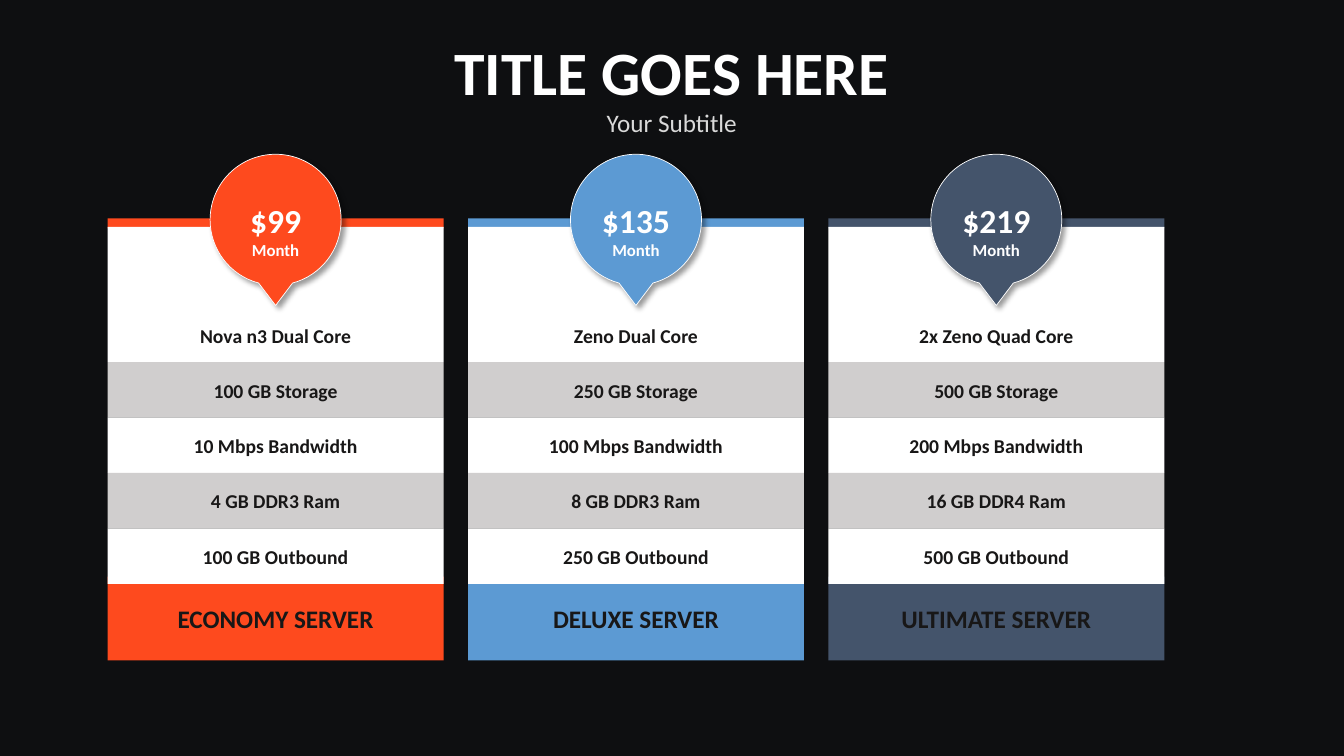
import math
import pptx
import pptx.util
import pptx.dml.color
import pptx.enum.shapes
import pptx.enum.text
import pptx.oxml.ns
from lxml import etree

Pt = pptx.util.Pt
RGBColor = pptx.dml.color.RGBColor
qn = pptx.oxml.ns.qn
PP_ALIGN = pptx.enum.text.PP_ALIGN
MSO_ANCHOR = pptx.enum.text.MSO_ANCHOR

BACKGROUND = RGBColor(0x0E, 0x0F, 0x11)
WHITE = RGBColor(0xFF, 0xFF, 0xFF)
SUBTITLE_GRAY = RGBColor(0xD9, 0xD9, 0xD9)
ROW_GRAY = RGBColor(0xD0, 0xCE, 0xCE)
INK = RGBColor(0x18, 0x17, 0x17)
ORANGE = RGBColor(0xFE, 0x4A, 0x1E)
BLUE = RGBColor(0x5C, 0x9A, 0xD3)
SLATE = RGBColor(0x44, 0x54, 0x6B)

TITLE = [("TITLE GOES HERE", 44, WHITE, True), ("Your Subtitle", 18, SUBTITLE_GRAY, False)]
PLANS = [
    {"name": "ECONOMY SERVER", "price": "$99", "color": ORANGE,
     "features": ["Nova n3 Dual Core", "100 GB Storage", "10 Mbps Bandwidth",
                  "4 GB DDR3 Ram", "100 GB Outbound"]},
    {"name": "DELUXE SERVER", "price": "$135", "color": BLUE,
     "features": ["Zeno Dual Core", "250 GB Storage", "100 Mbps Bandwidth",
                  "8 GB DDR3 Ram", "250 GB Outbound"]},
    {"name": "ULTIMATE SERVER", "price": "$219", "color": SLATE,
     "features": ["2x Zeno Quad Core", "500 GB Storage", "200 Mbps Bandwidth",
                  "16 GB DDR4 Ram", "500 GB Outbound"]},
]

SLIDE_W, SLIDE_H = 960, 540
LEFT, PITCH, WIDTH = 76.9, 257.4, 240
BAR_TOP, BAR_H = 156, 7.2
FIRST_TOP, ROWS_TOP, ROW_H = 162, 258.6, 39.6
FOOTER_TOP, FOOTER_H = 411.8, 60
LABEL_INSET, LABEL_W = 12, 216
LABEL_TOP, LABEL_STEP, LABEL_H = 231.1, 39.45, 17
NAME_TOP, NAME_H = 430.6, 21.6
PIN_Y, PIN_R, PIN_TIP = 157, 46.8, 218.2
PIN_ANGLES = [15, 90, 180, 270, 345]


def write(tf, lines):
    tf.word_wrap = True
    tf.text = "\n".join(line[0] for line in lines)
    for p, (_, size, color, bold) in zip(tf.paragraphs, lines):
        p.alignment = PP_ALIGN.CENTER
        font = p.runs[0].font
        font.name, font.size, font.bold = "Calibri", Pt(size), bold
        font.color.rgb = color


def add_rect(shapes, left, top, width, height, color):
    sp = shapes.add_shape(pptx.enum.shapes.MSO_SHAPE.RECTANGLE,
                          Pt(left), Pt(top), Pt(width), Pt(height))
    sp.shadow.inherit = False
    sp.fill.solid()
    sp.fill.fore_color.rgb = color
    sp.line.fill.background()
    return sp


def add_band(s, left, top, height, color, text, text_top, text_h, size):
    shapes = s.shapes.add_group_shape().shapes
    add_rect(shapes, left, top, WIDTH, height, color)
    tf = shapes.add_textbox(Pt(left + LABEL_INSET), Pt(text_top),
                            Pt(LABEL_W), Pt(text_h)).text_frame
    tf.margin_left = tf.margin_right = tf.margin_top = tf.margin_bottom = 0
    write(tf, [(text, size, INK, True)])


def add_shade(s):
    shade = add_rect(s.shapes, 0, 0, SLIDE_W, SLIDE_H, BACKGROUND)
    color = shade._element.spPr.find(qn("a:solidFill"))[0]
    etree.SubElement(color, qn("a:alpha"), val="80000")
    s.shapes._spTree.insert(2, shade._element)


def pin_points(center):
    def point(a, along=0):
        x = PIN_R * (math.sin(a) + along * math.cos(a))
        y = PIN_R * (math.cos(a) - along * math.sin(a))
        return Pt(center + x), Pt(PIN_Y + y)

    angles = [math.radians(a) for a in PIN_ANGLES]
    points = [point(angles[0])]
    for a, b in zip(angles, angles[1:]):
        reach = 4 / 3 * math.tan((b - a) / 4)
        points += [point(a, reach), point(b, -reach), point(b)]
    return points


def round_pin(sp):
    lines = list(sp._element.iter(qn("a:lnTo")))[1:]
    for i in range(0, len(lines), 3):
        curve = etree.Element(qn("a:cubicBezTo"))
        lines[i].addprevious(curve)
        for line in lines[i:i + 3]:
            curve.append(line[0])
            line.getparent().remove(line)


def add_price_pin(s, center, color, price):
    builder = s.shapes.build_freeform(Pt(center), Pt(PIN_TIP))
    builder.add_line_segments(pin_points(center), close=True)
    sp = builder.convert_to_shape()
    round_pin(sp)
    sp.fill.solid()
    sp.fill.fore_color.rgb = color
    sp.line.color.rgb = WHITE
    sp.line.width = Pt(0.5)
    sp.shadow.inherit = False
    effects = sp._element.spPr.find(qn("a:effectLst"))
    shadow = etree.SubElement(effects, qn("a:outerShdw"), blurRad=str(Pt(4)),
                              dist=str(Pt(3)), dir="2700000", algn="tl", rotWithShape="0")
    black = etree.SubElement(shadow, qn("a:srgbClr"), val="000000")
    etree.SubElement(black, qn("a:alpha"), val="40000")
    sp.text_frame.vertical_anchor = MSO_ANCHOR.MIDDLE
    write(sp.text_frame, [(price, 24, WHITE, True), ("Month", 12, WHITE, True)])


def add_plan(s, left, plan):
    color = plan["color"]
    add_rect(s.shapes, left, BAR_TOP, WIDTH, BAR_H, color)
    add_band(s, left, FOOTER_TOP, FOOTER_H, color, plan["name"], NAME_TOP, NAME_H, 18)
    for i, feature in enumerate(plan["features"]):
        top = ROWS_TOP + (i - 1) * ROW_H if i else FIRST_TOP
        bottom = ROWS_TOP + i * ROW_H
        add_band(s, left, top, bottom - top, ROW_GRAY if i % 2 else WHITE,
                 feature, LABEL_TOP + i * LABEL_STEP, LABEL_H, 14)
    add_price_pin(s, left + WIDTH / 2, color, plan["price"])


def main():
    prs = pptx.Presentation()
    prs.slide_width, prs.slide_height = Pt(SLIDE_W), Pt(SLIDE_H)
    s = prs.slides.add_slide(prs.slide_layouts[5])
    s.background.fill.solid()
    s.background.fill.fore_color.rgb = BACKGROUND
    add_shade(s)
    title = s.shapes.title
    title.left, title.top, title.width, title.height = Pt(263.2), Pt(20.5), Pt(433.4), Pt(82.1)
    title.text_frame.vertical_anchor = MSO_ANCHOR.TOP
    title.text_frame.auto_size = pptx.enum.text.MSO_AUTO_SIZE.NONE
    write(title.text_frame, TITLE)
    for i, plan in enumerate(PLANS):
        add_plan(s, LEFT + i * PITCH, plan)
    prs.save("out.pptx")


if __name__ == "__main__":
    main()
